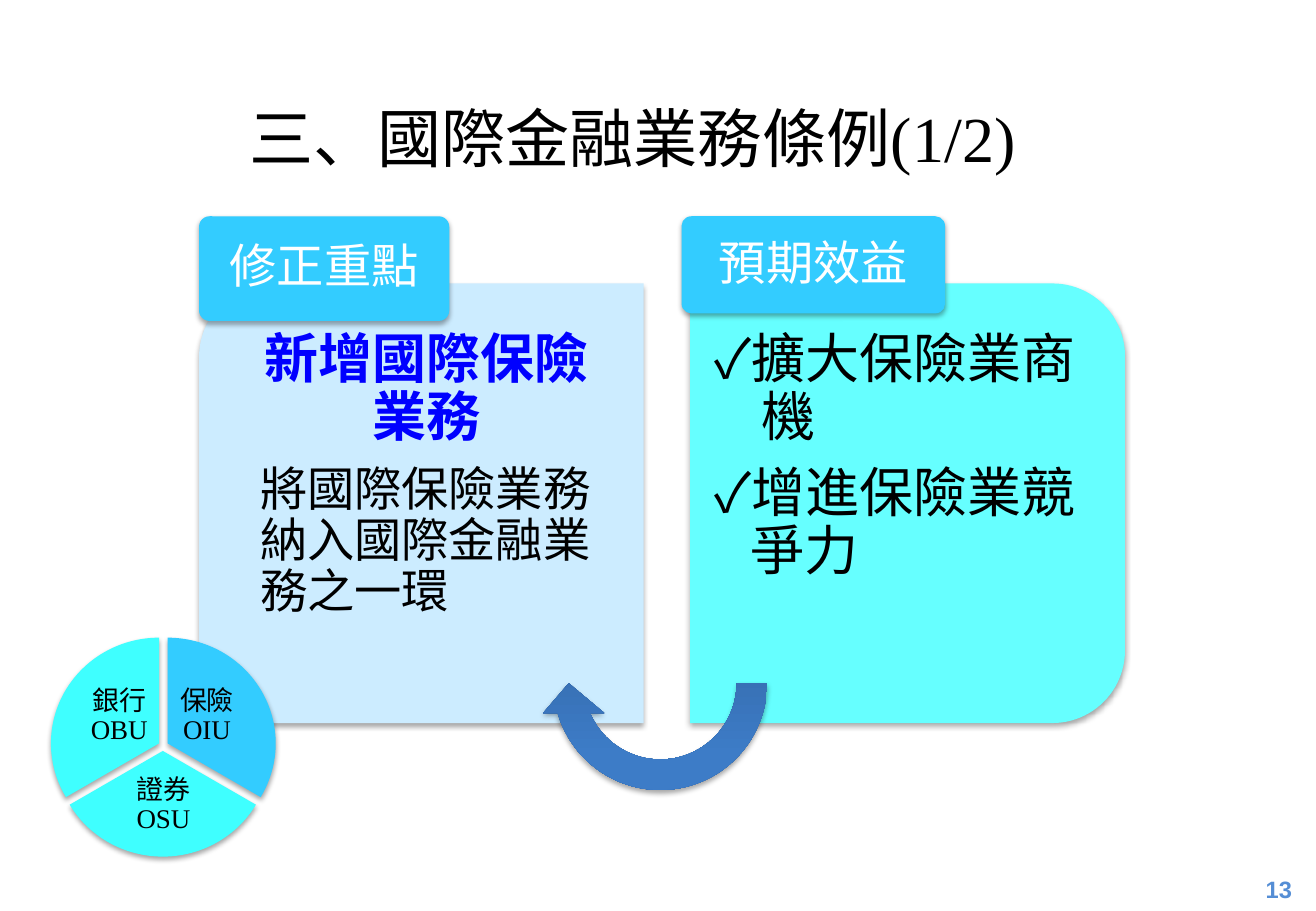
import pptx
import pptx.util
import pptx.dml.color
import pptx.enum.shapes
import pptx.enum.text
import pptx.oxml
import pptx.oxml.ns

Pt = pptx.util.Pt
SHAPE = pptx.enum.shapes.MSO_SHAPE
ALIGN = pptx.enum.text.PP_ALIGN
ANCHOR = pptx.enum.text.MSO_ANCHOR
COLORS = {
    "black": "000000", "white": "FFFFFF", "blue": "0000FF", "number": "558ED5",
    "pale": "CCECFF", "aqua": "66FFFF", "cyan": "3FFFFF", "sky": "33CCFF",
    "arrow_dark": "2F5F99", "arrow_light": "3D7CC7",
}
SHADOW = (
    '<a:effectLst xmlns:a="http://schemas.openxmlformats.org/drawingml/2006/main">'
    '<a:outerShdw blurRad="40000" dist="23000" dir="5400000" rotWithShape="0">'
    '<a:srgbClr val="000000"><a:alpha val="35000"/></a:srgbClr>'
    '</a:outerShdw></a:effectLst>'
)


def rgb(name):
    return pptx.dml.color.RGBColor.from_string(COLORS[name])


def place(sp, box):
    sp.left, sp.top, sp.width, sp.height = (Pt(v) for v in box)


def set_frame(tf, insets, anchor=ANCHOR.TOP):
    tf.word_wrap = True
    tf.auto_size = pptx.enum.text.MSO_AUTO_SIZE.NONE
    tf.vertical_anchor = anchor
    tf.margin_left, tf.margin_top, tf.margin_right, tf.margin_bottom = (Pt(v) for v in insets)


def add_text(tf, text, size, color="black", font="Times New Roman", bold=False,
             align=ALIGN.LEFT, spacing=1.0, after=0, margin=0, indent=0):
    p = tf.paragraphs[0]
    if p.runs:
        p = tf.add_paragraph()
    pPr = p._p.get_or_add_pPr()
    pPr.set("marL", str(Pt(margin)))
    pPr.set("indent", str(Pt(indent)))
    pPr.append(pPr.makeelement(pptx.oxml.ns.qn("a:buNone"), {}))
    p.alignment = align
    p.line_spacing = spacing
    p.space_before = Pt(0)
    p.space_after = Pt(after)
    for i, line in enumerate(text.split("\n")):
        if i:
            p.add_line_break()
        r = p.add_run()
        r.text = line
        r.font.name = font
        r.font.size = Pt(size)
        r.font.bold = bold
        r.font.color.rgb = rgb(color)


def add_shape(s, kind, box, color, adjustments=(), rotation=0):
    sp = s.shapes.add_shape(kind, *(Pt(v) for v in box))
    for i, value in enumerate(adjustments):
        sp.adjustments[i] = value
    sp.rotation = rotation
    sp.fill.solid()
    sp.fill.fore_color.rgb = rgb(color)
    sp.line.fill.background()
    sp._element.spPr.append(pptx.oxml.parse_xml(SHADOW))
    return sp


def add_label(s, box, text, size, **fmt):
    tb = s.shapes.add_textbox(*(Pt(v) for v in box))
    set_frame(tb.text_frame, (0, 0, 0, 0), ANCHOR.MIDDLE)
    add_text(tb.text_frame, text, size, align=ALIGN.CENTER, **fmt)


def add_title(s, box, text):
    sp = s.shapes.title
    place(sp, box)
    set_frame(sp.text_frame, (7.2, 3.6, 7.2, 3.6))
    add_text(sp.text_frame, text, 38, align=ALIGN.JUSTIFY)


def add_panel(s, box, color, rotation, body, body_box, insets, items, tab_box, heading):
    x, y, w, h = box
    add_shape(s, SHAPE.ROUND_2_SAME_RECTANGLE, (x + (w - h) / 2, y + (h - w) / 2, h, w),
              color, (0.167, 0), rotation)
    s.shapes._spTree.append(body._element)
    dx, dy, bw, bh = body_box
    place(body, (x + dx, y + dy, bw, bh))
    set_frame(body.text_frame, insets)
    for text, fmt in items:
        add_text(body.text_frame, text, spacing=0.9, after=10, **fmt)
    dx, dy, tw, th = tab_box
    tab = add_shape(s, SHAPE.ROUNDED_RECTANGLE, (x + dx, y + dy, tw, th), "sky", (0.1,))
    set_frame(tab.text_frame, (4, 3, 4, 3), ANCHOR.MIDDLE)
    add_text(tab.text_frame, heading, 28, color="white", align=ALIGN.CENTER, spacing=0.9)


def add_turn_arrow(s, box):
    sp = add_shape(s, SHAPE.CIRCULAR_ARROW, box, "arrow_dark",
                   (0.125, 11.42, 204.58, 108, 0.125), 180)
    sp.fill.gradient()
    sp.fill.gradient_angle = 90
    for stop, position, color in zip(sp.fill.gradient_stops, (0, 0.8),
                                     ("arrow_dark", "arrow_light")):
        stop.position = position
        stop.color.rgb = rgb(color)


def add_pie(s, box):
    x, y, w, h = box
    sectors = [
        ("保險\nOIU", "sky", 270, (5, 0), (61, 25, 53, 43)),
        ("證券\nOSU", "cyan", 30, (2.2, 4.5), (28, 76, 73, 38)),
        ("銀行\nOBU", "cyan", 150, (0, 0), (14, 25, 53, 43)),
    ]
    for text, color, start, (dx, dy), (tx, ty, tw, th) in sectors:
        add_shape(s, SHAPE.PIE, (x + dx, y + dy, w, h), color,
                  (start * 0.6, (start + 120) % 360 * 0.6))
        add_label(s, (x + dx + tx, y + dy + ty, tw, th), text, 16, spacing=0.9)


def main():
    prs = pptx.Presentation()
    prs.slide_width, prs.slide_height = Pt(780), Pt(540)
    s = prs.slides.add_slide(prs.slide_layouts[3])
    left_body, right_body = s.placeholders[1], s.placeholders[2]

    add_label(s, (736, 514, 44, 26), "13", 14, color="number", font="Arial", bold=True)
    add_title(s, (140.4, 54.7, 499, 53.3), "三、國際金融業務條例(1/2)")
    add_panel(
        s, (118, 168, 263.5, 260.6), "pale", 270, left_body,
        (12.3, 12.7, 250.6, 235.4), (9.4, 16, 14.4, 16),
        [("新增國際保險\n業務", dict(size=32, color="blue", bold=True, align=ALIGN.CENTER)),
         ("將國際保險業務納入國際金融業務之一環", dict(size=28, margin=14.4))],
        (0, -39.8, 148.3, 62), "修正重點")
    add_panel(
        s, (409, 168, 257.8, 260.6), "aqua", 90, right_body,
        (0, 12.7, 244.8, 235.4), (14.4, 16, 9.4, 16),
        [("✓擴大保險業商機", dict(size=32, margin=28, indent=-28)),
         ("✓增進保險業競爭力", dict(size=32, margin=21.6, indent=-21.6))],
        (-5, -39.8, 156.2, 57.6), "預期效益")
    add_turn_arrow(s, (319, 332.6, 144.7, 144.7))
    add_pie(s, (30.2, 378, 128.2, 125.3))
    prs.save("out.pptx")


if __name__ == "__main__":
    main()
